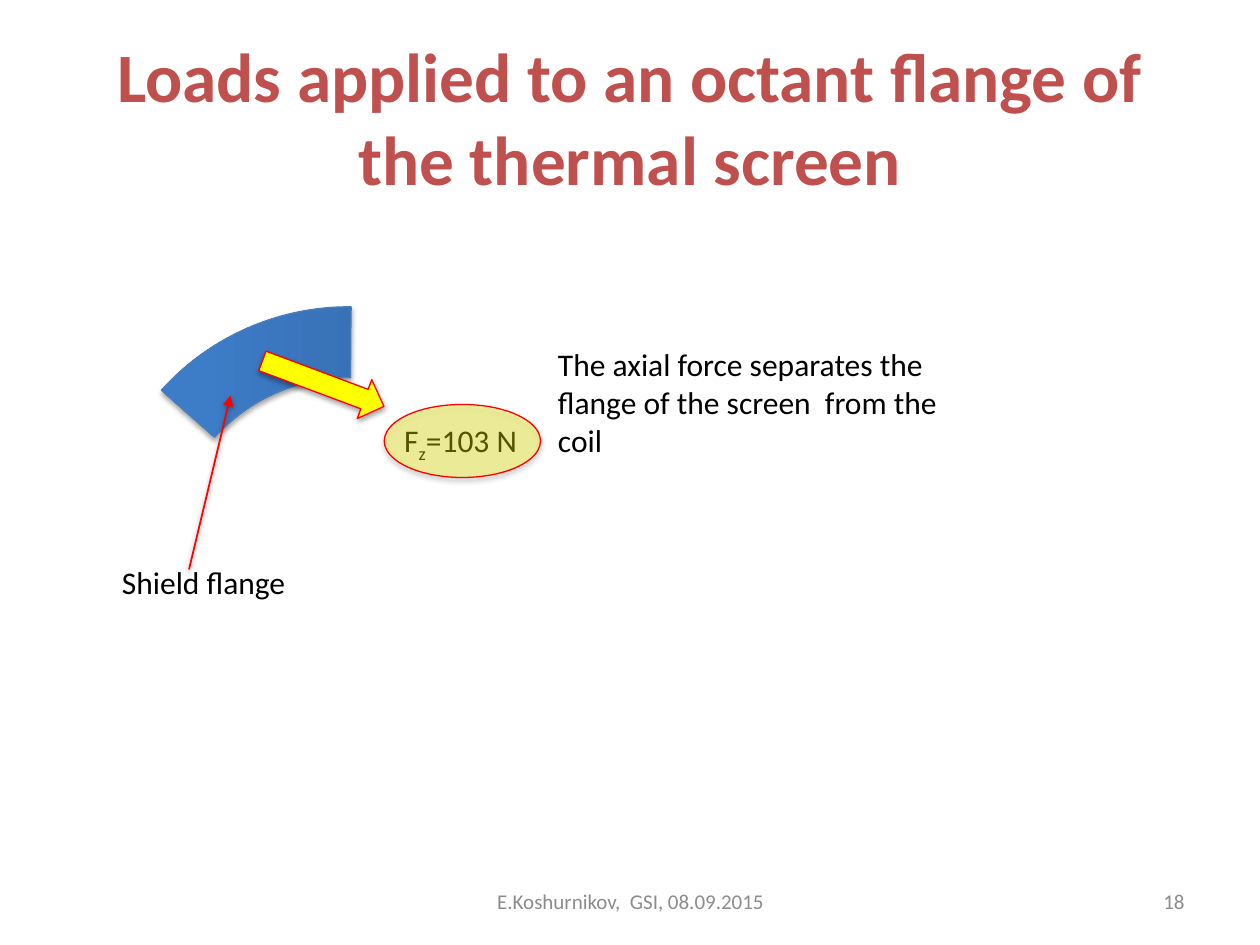
from pptx import Presentation
from pptx.dml.color import RGBColor
from pptx.enum.shapes import MSO_CONNECTOR as Connector, MSO_SHAPE as Shape
from pptx.enum.text import MSO_ANCHOR as Anchor, PP_ALIGN as Align
from pptx.oxml import parse_xml
from pptx.oxml.ns import nsdecls, qn
from pptx.util import Inches, Pt

COLUMNS, ROWS = 100, 75
RED, YELLOW, GREY = "FF0000", "FFFF00", "8C8C8C"


def color(hex_string):
    return RGBColor.from_string(hex_string)


def element(tag, content="", **attributes):
    """Build one DrawingML element from its tag, attributes and inner XML."""
    values = " ".join(f'{name}="{value}"' for name, value in attributes.items())
    return parse_xml(f'<a:{tag} {nsdecls("a")} {values}>{content}</a:{tag}>')


def color_xml(hex_string, alpha=100):
    return f'<a:srgbClr val="{hex_string}"><a:alpha val="{alpha * 1000}"/></a:srgbClr>'


def shadow(alpha, distance):
    return element("outerShdw", color_xml("000000", alpha), blurRad=Pt(3.1),
                   dist=Pt(distance), dir=90 * 60000, rotWithShape=0)


def write(frame, text, size=18, hex_color="000000", bold=False,
          align=Align.LEFT, anchor=Anchor.TOP):
    """Fill a text frame; text is a string or (string, baseline percent) pairs."""
    frame.word_wrap = True
    frame.vertical_anchor = anchor
    paragraph = frame.paragraphs[0]
    paragraph.alignment = align
    for part, baseline in [(text, 0)] if isinstance(text, str) else text:
        run = paragraph.add_run()
        run.text = part
        font = run.font
        font.name, font.size, font.bold = "Calibri", Pt(size), bold
        font.color.rgb = color(hex_color)
        if baseline:
            font._element.set("baseline", str(baseline * 1000))


class Drawing:
    """Places elements on the current slide in grid columns and rows."""

    def __init__(self, presentation):
        self.column = presentation.slide_width / COLUMNS
        self.row = presentation.slide_height / ROWS
        self.slide = presentation.slides.add_slide(presentation.slide_layouts[6])
        self.shapes = self.slide.shapes

    def cells(self, *lengths):
        units = (self.column, self.row) * 2
        return [round(length * unit) for length, unit in zip(lengths, units)]

    def start_group(self):
        self.shapes = self.slide.shapes.add_group_shape().shapes

    def end_group(self):
        self.shapes = self.slide.shapes

    def text(self, place, text, **style):
        write(self.shapes.add_textbox(*self.cells(*place)).text_frame, text, **style)

    def shape(self, kind, place, fill, line=RED, rotation=0, adjustments=()):
        """Add a shadowed shape; fill is a ready DrawingML fill element."""
        shape = self.shapes.add_shape(kind, *self.cells(*place))
        shape.rotation = rotation
        for index, value in enumerate(adjustments):
            shape.adjustments[index] = value
        shape.fill.background()
        properties = shape._element.spPr
        properties.replace(properties.find(qn("a:noFill")), fill)
        shape.line.color.rgb = color(line)
        shape.line.width = Pt(0.75)
        shape.shadow.inherit = False
        properties.find(qn("a:effectLst")).append(shadow(35, 1.8))

    def arrow(self, start, end):
        arrow = self.shapes.add_connector(Connector.STRAIGHT, *self.cells(*start, *end))
        arrow.line.color.rgb = color(RED)
        arrow.line.width = Pt(1)
        properties = arrow._element.spPr
        properties.find(qn("a:ln")).append(element("tailEnd", type="triangle"))
        effects = element("effectLst")
        effects.append(shadow(38, 1.6))
        properties.append(effects)


def solid(hex_string, alpha=100):
    return element("solidFill", color_xml(hex_string, alpha))


def gradient(stops, angle):
    stop_xml = "".join(f'<a:gs pos="{position * 1000}">{color_xml(shade)}</a:gs>'
                       for position, shade in stops)
    return element("gradFill", f'<a:gsLst>{stop_xml}</a:gsLst>'
                   f'<a:lin ang="{angle * 60000}" scaled="0"/>', rotWithShape=1)


def main():
    presentation = Presentation()
    presentation.slide_width, presentation.slide_height = Inches(10), Inches(7.5)
    drawing = Drawing(presentation)

    drawing.text((5, 3, 90, 12.5), "Loads applied to an octant flange of the thermal screen",
                 size=39.6, hex_color="C0504D", bold=True,
                 align=Align.CENTER, anchor=Anchor.MIDDLE)
    footer = dict(size=12, hex_color=GREY, anchor=Anchor.MIDDLE)
    drawing.text((34.2, 69.5, 31.7, 4), "E.Koshurnikov,  GSI, 08.09.2015",
                 align=Align.CENTER, **footer)
    drawing.text((71.7, 69.5, 23.3, 4), "18", align=Align.RIGHT, **footer)

    drawing.start_group()
    drawing.text((31.1, 32.9, 12.9, 4.5), [("F", 0), ("z", -25), ("=103 N", 0)])
    drawing.shape(Shape.OVAL, (30.5, 32.1, 12.4, 5.8), solid(YELLOW, alpha=33))
    flange_fill = gradient([(0, "2F5F99"), (80, "3D7CC7"), (100, "3A7CCB")], angle=270)
    drawing.shape(Shape.BLOCK_ARC, (7.9, 24.2, 39.6, 39.9), flange_fill, line="4B7EBC",
                  rotation=270, adjustments=(186.908, 0.277, 0.142))
    drawing.shape(Shape.RIGHT_ARROW, (20.5, 28.8, 10.3, 3.3), solid(YELLOW), rotation=20.5)
    drawing.end_group()

    drawing.text((43.3, 26.9, 36.1, 10.1),
                 "The axial force separates the flange of the screen  from the coil")
    drawing.text((8.7, 44.2, 23.4, 4), "Shield flange")
    drawing.arrow((15, 45.2), (18.3, 31.4))
    presentation.save("out.pptx")


if __name__ == "__main__":
    main()
